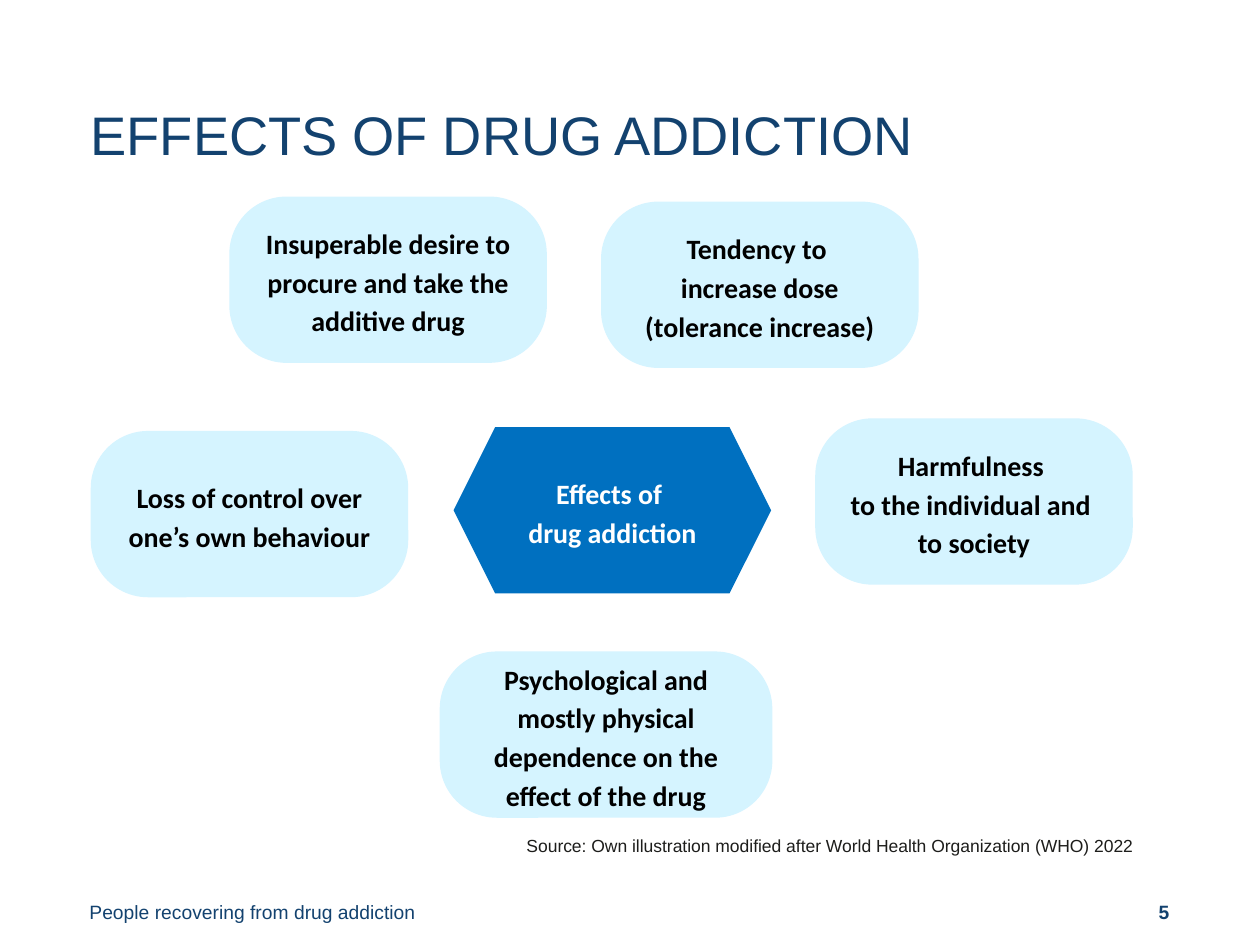
"""Build the slide on the effects of drug addiction."""
from pptx import Presentation
from pptx.dml.color import RGBColor
from pptx.enum.shapes import MSO_SHAPE
from pptx.enum.text import MSO_ANCHOR, MSO_AUTO_SIZE, PP_ALIGN
from pptx.util import Inches, Pt

ROUNDED, HEXAGON = MSO_SHAPE.ROUNDED_RECTANGLE, MSO_SHAPE.HEXAGON
TOP, MIDDLE, BOTTOM = MSO_ANCHOR.TOP, MSO_ANCHOR.MIDDLE, MSO_ANCHOR.BOTTOM
LEFT, CENTER, RIGHT = PP_ALIGN.LEFT, PP_ALIGN.CENTER, PP_ALIGN.RIGHT
NO_AUTOFIT = MSO_AUTO_SIZE.NONE

COLORS = {
    "navy": "13426F",
    "pale": "D5F4FF",
    "blue": "0070C0",
    "black": "000000",
    "white": "FFFFFF",
    "source": "1D1D1B",
}
NODE_W, NODE_H = 2.52, 1.32
EFFECTS = [
    (4.77, 1.6, NODE_W, "Tendency to \vincrease dose (tolerance increase)"),
    (1.82, 1.56, NODE_W, "Insuperable desire to procure and take the additive drug"),
    (0.72, 3.42, NODE_W, "Loss of control over one’s own behaviour"),
    (6.47, 3.32, NODE_W, "Harmfulness \vto the individual and \vto society"),
    (3.49, 5.17, 2.64,
     "Psychological and mostly physical dependence on the effect of the drug"),
]


def rgb(name):
    return RGBColor.from_string(COLORS[name])


def write(tf, text, size, color, font="Arial", bold=False, align=LEFT,
          anchor=TOP, spacing=None, insets=(0.1, 0.05, 0.1, 0.05)):
    """Fill a text frame with one formatted paragraph."""
    tf.word_wrap = True
    tf.auto_size = NO_AUTOFIT
    tf.vertical_anchor = anchor
    tf.margin_left, tf.margin_top, tf.margin_right, tf.margin_bottom = map(Inches, insets)
    p = tf.paragraphs[0]
    p.text = text
    p.alignment = align
    p.line_spacing = spacing
    p.font.name, p.font.size, p.font.bold = font, Pt(size), bold
    p.font.color.rgb = rgb(color)


def add_title(s, text):
    """Place and format the title."""
    sp = s.shapes.title
    sp.left, sp.top, sp.width, sp.height = map(Inches, (0.72, 0.8, 8.55, 1.12))
    write(sp.text_frame, text, 31, "navy", spacing=Pt(34), insets=(0, 0.05, 0.1, 0.05))


def add_text(s, box, text, size, color, **style):
    """Add a text box."""
    sp = s.shapes.add_textbox(*map(Inches, box))
    write(sp.text_frame, text, size, color, **style)


def add_node(s, shape, left, top, width, text, fill, color):
    """Add a filled shape with a centred bold label."""
    sp = s.shapes.add_shape(shape, *map(Inches, (left, top, width, NODE_H)))
    sp.shadow.inherit = False
    sp.fill.solid()
    sp.fill.fore_color.rgb = rgb(fill)
    sp.line.fill.background()
    if shape == ROUNDED:
        sp.adjustments[0] = 0.344
    write(sp.text_frame, text, 16, color, font="Calibri", bold=True,
          align=CENTER, anchor=MIDDLE, spacing=1.15)


def main():
    """Build and save the slide."""
    prs = Presentation()
    prs.slide_width, prs.slide_height = Inches(10), Inches(7.5)
    s = prs.slides.add_slide(prs.slide_layouts[5])

    add_text(s, (0, 6.89, 3.38, 0.6), "People recovering from drug addiction", 11, "navy",
             anchor=BOTTOM, spacing=Pt(13.3), insets=(0.71, 0.05, 0, 0.16))
    add_text(s, (7.74, 6.89, 2.25, 0.6), "5", 11, "navy", bold=True, align=RIGHT,
             anchor=BOTTOM, spacing=Pt(13.3), insets=(0, 0.05, 0.71, 0.16))
    add_title(s, "EFFECTS OF DRUG ADDICTION")
    for left, top, width, text in EFFECTS:
        add_node(s, ROUNDED, left, top, width, text, "pale", "black")
    add_node(s, HEXAGON, 3.6, 3.39, NODE_W, "Effects of \vdrug addiction", "blue", "white")
    add_text(s, (4.08, 6.58, 5.49, 0.27),
             "Source: Own illustration modified after World Health Organization (WHO) 2022",
             10, "source")

    prs.save("out.pptx")


if __name__ == "__main__":
    main()
